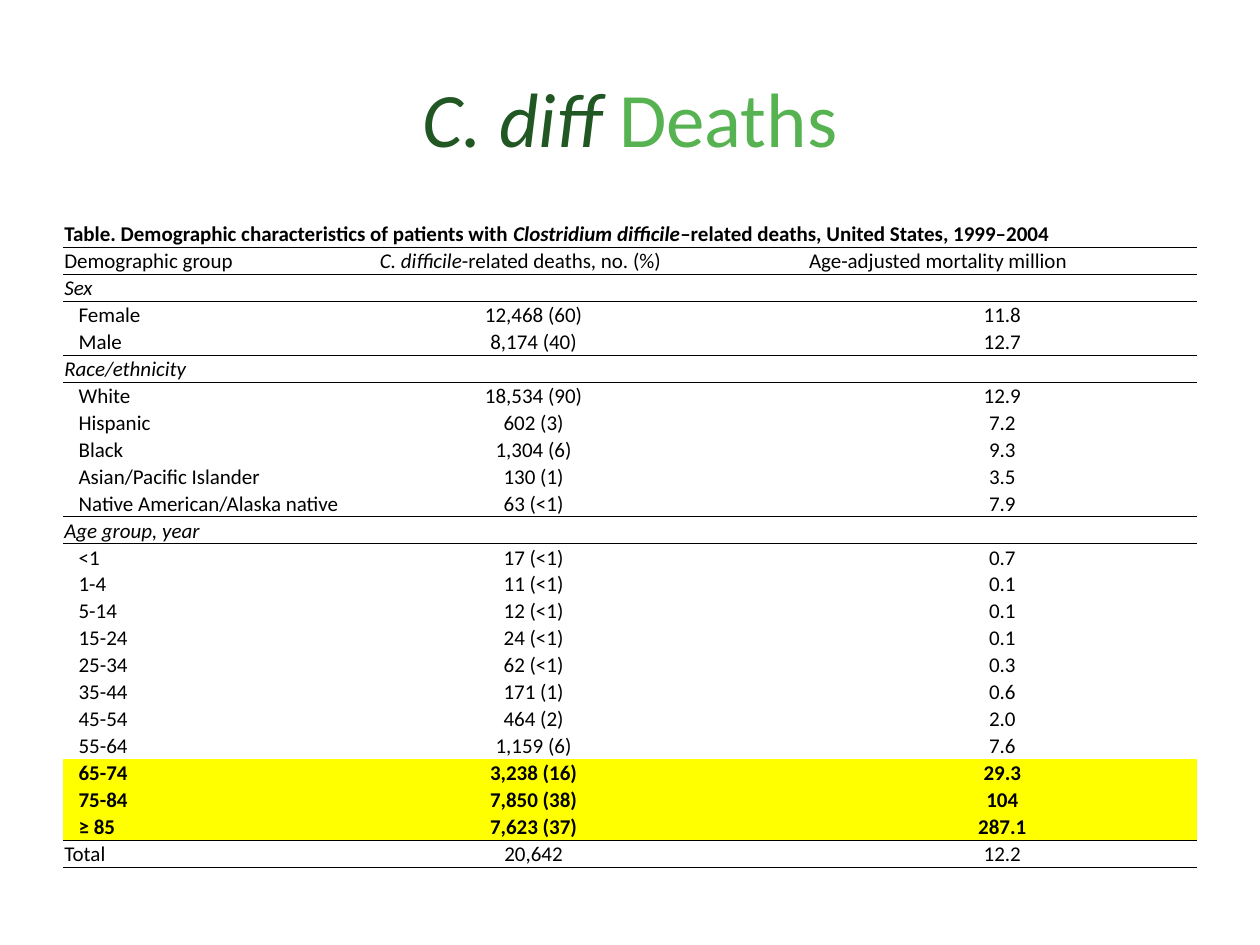
from lxml.etree import SubElement
from pptx import Presentation
from pptx.dml.color import RGBColor
from pptx.enum.text import MSO_ANCHOR as Anchor, PP_ALIGN as Align
from pptx.oxml.ns import qn
from pptx.util import Pt

BLACK = RGBColor(0x00, 0x00, 0x00)
YELLOW = RGBColor(0xFF, 0xFF, 0x00)
DARK_GREEN = RGBColor(0x21, 0x57, 0x23)
GREEN = RGBColor(0x57, 0xB2, 0x51)
NO_STYLE = "{2D5ABB26-0587-4C30-8999-92F81FD0307C}"

COL_WIDTHS = (112, 68.4, 177, 68.2, 222.4)
ROW_HEIGHT = 15.36
VALUE_COLS = (2, 4)
CAPTION = (
    ("Table. Demographic characteristics of patients with ", {}),
    ("Clostridium difficile", {"italic": True}),
    ("–related deaths, United States, 1999–2004", {}),
)
DEATHS_HEADER = (("C. difficile", {"italic": True}), ("-related deaths, no. (%)", {}))
GROUPS = (
    ("Sex", (("Female", "12,468 (60)", "11.8"), ("Male", "8,174 (40)", "12.7"))),
    ("Race/ethnicity", (
        ("White", "18,534 (90)", "12.9"),
        ("Hispanic", "602 (3)", "7.2"),
        ("Black", "1,304 (6)", "9.3"),
        ("Asian/Pacific Islander", "130 (1)", "3.5"),
        ("Native American/Alaska native", "63 (<1)", "7.9"),
    )),
    ("Age group, year", (
        ("<1", "17 (<1)", "0.7"),
        ("1-4", "11 (<1)", "0.1"),
        ("5-14", "12 (<1)", "0.1"),
        ("15-24", "24 (<1)", "0.1"),
        ("25-34", "62 (<1)", "0.3"),
        ("35-44", "171 (1)", "0.6"),
        ("45-54", "464 (2)", "2.0"),
        ("55-64", "1,159 (6)", "7.6"),
        ("65-74", "3,238 (16)", "29.3"),
        ("75-84", "7,850 (38)", "104"),
        ("≥ 85", "7,623 (37)", "287.1"),
    )),
)
HIGHLIGHTED = ("65-74", "75-84", "≥ 85")
WIDE_LABELS = ("Asian/Pacific Islander", "Native American/Alaska native")


class Deck:
    """Holds the text style and the current slide, and adds its elements."""

    def __init__(self, prs, font="Calibri", size=12):
        self.s = prs.slides.add_slide(prs.slide_layouts[5])
        self.font, self.size = font, size

    def runs(self, p, parts, **base):
        for text, extra in parts:
            r = p.add_run()
            r.text = text
            fmt = {"name": self.font, "size": Pt(self.size), "color": BLACK, **base, **extra}
            r.font.color.rgb = fmt.pop("color")
            for key, value in fmt.items():
                setattr(r.font, key, value)

    def title(self, box, parts):
        sp = self.s.shapes.title
        for key, value in zip(("left", "top", "width", "height"), box):
            setattr(sp, key, Pt(value))
        tf = sp.text_frame
        tf.vertical_anchor = Anchor.MIDDLE
        tf.paragraphs[0].alignment = Align.CENTER
        self.runs(tf.paragraphs[0], parts, size=Pt(44))

    def table(self, left, top, row_count):
        width, height = sum(COL_WIDTHS), ROW_HEIGHT * row_count
        frame = self.s.shapes.add_table(
            row_count, len(COL_WIDTHS), Pt(left), Pt(top), Pt(width), Pt(height))
        tbl = frame.table
        tbl.first_row = tbl.horz_banding = False
        frame._element.find(".//" + qn("a:tableStyleId")).text = NO_STYLE
        for col, col_width in zip(tbl.columns, COL_WIDTHS):
            col.width = Pt(col_width)
        for row in tbl.rows:
            row.height = Pt(ROW_HEIGHT)
        return tbl

    def cell(self, cell, parts=(), indent=0, align=Align.LEFT, fill=None, sides=(), **fmt):
        margins = {"margin_left": 0.75 + indent, "margin_right": 0.75,
                   "margin_top": 0.75, "margin_bottom": 0}
        for key, value in margins.items():
            setattr(cell, key, Pt(value))
        cell.vertical_anchor = Anchor.BOTTOM
        for side in sides:
            self.border(cell, side)
        if fill is None:
            cell.fill.background()
        else:
            cell.fill.solid()
            cell.fill.fore_color.rgb = fill
        p = cell.text_frame.paragraphs[0]
        p.alignment = align
        self.runs(p, parts, **fmt)
        if not parts:
            SubElement(p._p, qn("a:endParaRPr"), sz=str(self.size * 100))

    def border(self, cell, side):
        ln = SubElement(cell._tc.get_or_add_tcPr(), qn("a:ln" + side), w=str(Pt(0.5)))
        SubElement(SubElement(ln, qn("a:solidFill")), qn("a:srgbClr"), val=str(BLACK))


def table_rows():
    """Yield each row as its texts by column, its format and whether a rule follows."""
    yield {0: CAPTION}, {"bold": True}, True
    yield {0: "Demographic group", 2: DEATHS_HEADER, 4: "Age-adjusted mortality million"}, {}, True
    for heading, members in GROUPS:
        yield {0: heading}, {"italic": True}, False
        for label, deaths, rate in members:
            fmt = {"fill": YELLOW, "bold": True} if label in HIGHLIGHTED else {}
            yield {0: label, 2: deaths, 4: rate}, {"indent": 8.2, **fmt}, label == members[-1][0]
    yield {0: "Total", 2: "20,642", 4: "12.2"}, {}, True


def main():
    """Build the slide and save it."""
    prs = Presentation()
    prs.slide_width, prs.slide_height = Pt(720), Pt(540)
    deck = Deck(prs)
    deck.title((36, 21.6, 648, 90), (
        ("C. diff ", {"italic": True, "color": DARK_GREEN}), ("Deaths", {"color": GREEN})))
    rows = list(table_rows())
    tbl = deck.table(36, 126, len(rows))
    ruled_above = False
    for i, (texts, fmt, ruled_below) in enumerate(rows):
        sides = "T" * ruled_above + "B" * ruled_below
        for j in range(len(COL_WIDTHS)):
            parts = texts.get(j, ())
            if isinstance(parts, str):
                parts = ((parts, {}),)
            style = dict(fmt)
            if j in VALUE_COLS:
                style["indent"] = 0
                style["align"] = Align.LEFT if i == 1 else Align.CENTER
            deck.cell(tbl.cell(i, j), parts, sides=sides, **style)
        if texts[0] in WIDE_LABELS:
            tbl.cell(i, 0).merge(tbl.cell(i, 1))
        ruled_above = ruled_below
    tbl.cell(0, 0).merge(tbl.cell(0, 4))
    tbl.cell(1, 2).merge(tbl.cell(1, 3))
    prs.save("out.pptx")


if __name__ == "__main__":
    main()
